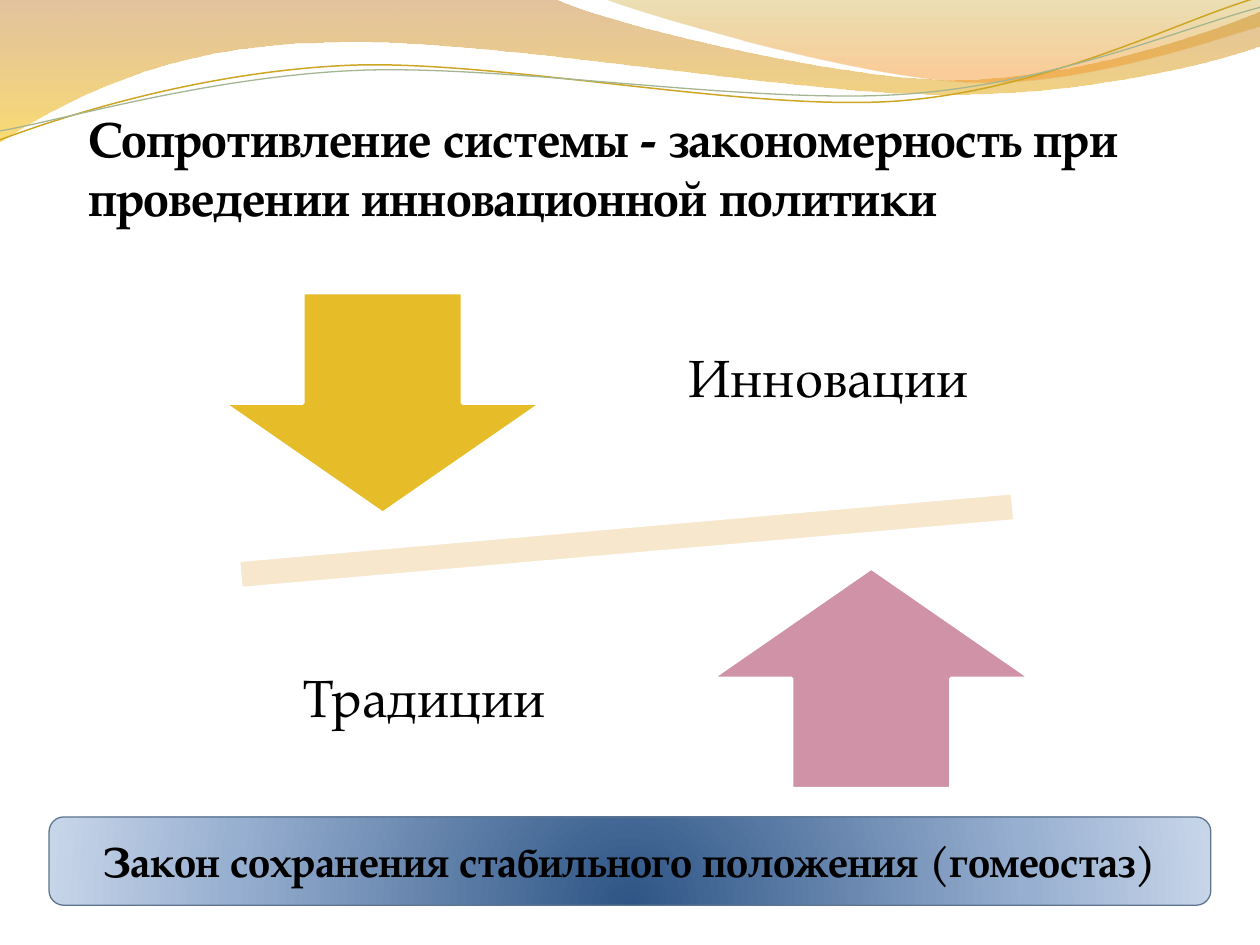
from dataclasses import dataclass

from lxml.etree import SubElement
from pptx import Presentation
from pptx.dml.color import RGBColor
from pptx.enum.shapes import MSO_SHAPE as SHAPE
from pptx.enum.text import MSO_ANCHOR as ANCHOR, MSO_AUTO_SIZE as AUTOSIZE, PP_ALIGN as ALIGN
from pptx.oxml.ns import qn
from pptx.util import Cm, Pt


@dataclass(frozen=True)
class Theme:
    font: str = "TeX Gyre Pagella"
    text: str = "000000"
    white: str = "FFFFFF"
    beam: str = "F6E7CD"
    down: str = "E7BC29"
    up: str = "D092A7"
    gold_line: str = "CCA624"
    green_line: str = "A5B592"
    law_line: str = "5E7590"
    wave: tuple = ((0, "C07A28", 45), (100, "F7BF00", 55))
    corner: tuple = ((0, "C09709", 30), (80, "F59320", 45))
    law: tuple = ((0, "2E5585", 100), (68, "97AFD0", 100), (100, "C7D5E9", 100))
    title_size: int = 28
    label_size: int = 30
    law_size: int = 24


THEME = Theme()

WAVE = [(0, -0.03), (11.18, -0.03),
        (12.09, 0.43, 16.87, 1.6, 19.25, 1.6),
        (21.67, 1.6, 24.33, 0.66, 25.4, 0.23), (25.43, 0.91),
        (24.97, 1.12, 22.1, 1.93, 18.95, 1.9),
        (15.8, 1.9, 9.7, 0.71, 6.53, 0.86),
        (3.28, 0.89, 1.17, 2.11, -0.03, 2.87), (0, -0.03)]
CORNER = [(12.17, -0.03),
          (12.93, 0.28, 17.32, 1.57, 19.53, 1.65),
          (21.74, 1.75, 24.41, 0.81, 25.4, 0.53), (25.4, 0), (12.17, -0.03)]
GOLD_CURVE = [(-0.05, 2.22),
              (1.19, 1.82, 4.02, 1.04, 7.05, 1.05),
              (10.05, 1.07, 15.02, 2.37, 18.08, 2.29),
              (21.13, 2.2, 23.86, 0.91, 25.41, 0.55)]
GREEN_CURVE = [(-0.04, 2.04),
               (1.16, 1.9, 4.17, 1.15, 7.2, 1.16),
               (10.25, 1.18, 15.13, 2.23, 18.19, 2.16),
               (21.22, 2.1, 23.95, 1.06, 25.45, 0.75)]
CURVE_ROTATION = 357.3


def rgb(color):
    return RGBColor.from_string(color)


def box(*lengths):
    return [Cm(v) for v in lengths]


def add_color(parent, color, opacity):
    clr = SubElement(parent, qn("a:srgbClr"), val=color)
    if opacity < 100:
        SubElement(clr, qn("a:alpha"), val=str(opacity * 1000))


def set_gradient(sp, stops, radial=False):
    sp.fill.background()
    no_fill = sp._element.spPr.find(qn("a:noFill"))
    grad = SubElement(sp._element.spPr, qn("a:gradFill"), rotWithShape="1")
    stop_list = SubElement(grad, qn("a:gsLst"))
    for pos, color, opacity in stops:
        add_color(SubElement(stop_list, qn("a:gs"), pos=str(pos * 1000)), color, opacity)
    if radial:
        circle = SubElement(grad, qn("a:path"), {"path": "circle"})
        SubElement(circle, qn("a:fillToRect"), l="50000", t="130000", r="50000", b="-30000")
    else:
        SubElement(grad, qn("a:lin"), ang="5400000", scaled="1")
    no_fill.getparent().replace(no_fill, grad)


def set_line(sp, color, width):
    sp.line.color.rgb = rgb(color)
    sp.line.width = Pt(width)


def bend_segments(sp, segments):
    lines = iter(list(sp._element.iter(qn("a:lnTo"))))
    for seg in segments:
        line = next(lines)
        if len(seg) == 6:
            line.tag = qn("a:cubicBezTo")
            for _ in range(2):
                extra = next(lines)
                line.append(extra[0])
                extra.getparent().remove(extra)


def add_outline(slide, outline, closed):
    points = [box(*seg[i:i + 2]) for seg in outline for i in range(0, len(seg), 2)]
    builder = slide.shapes.build_freeform(*points[0])
    builder.add_line_segments(points[1:], close=closed)
    sp = builder.convert_to_shape()
    bend_segments(sp, outline[1:])
    sp.shadow.inherit = False
    return sp


def add_area(slide, outline, stops):
    sp = add_outline(slide, outline, True)
    set_gradient(sp, stops)
    sp.line.fill.background()


def add_curve(slide, outline, color, width):
    sp = add_outline(slide, outline, False)
    sp.rotation = CURVE_ROTATION
    sp.fill.background()
    set_line(sp, color, width)


def set_text(sp, text, size, bold, align, anchor):
    tf = sp.text_frame
    tf.text = text
    tf.word_wrap = True
    tf.auto_size = AUTOSIZE.NONE
    tf.vertical_anchor = anchor
    p = tf.paragraphs[0]
    p.alignment = align
    font = p.runs[0].font
    font.name, font.size, font.bold = THEME.font, Pt(size), bold
    font.color.rgb = rgb(THEME.text)
    return tf


def add_title(slide, text):
    sp = slide.shapes.title
    sp.left, sp.top, sp.width, sp.height = box(1.78, 1.98, 23.01, 2.59)
    tf = set_text(sp, text, THEME.title_size, True, ALIGN.LEFT, ANCHOR.BOTTOM)
    tf.margin_left = tf.margin_right = tf.margin_bottom = 0
    tf.margin_top = Cm(0.13)


def add_solid(slide, kind, place, color, rotation=0):
    sp = slide.shapes.add_shape(kind, *box(*place))
    sp.shadow.inherit = False
    sp.rotation = rotation
    sp.fill.solid()
    sp.fill.fore_color.rgb = rgb(color)
    set_line(sp, THEME.white, 2)


def add_label(slide, text, left, top):
    sp = slide.shapes.add_textbox(*box(left, top, 6.86, 4.65))
    tf = set_text(sp, text, THEME.label_size, False, ALIGN.CENTER, ANCHOR.MIDDLE)
    tf.margin_left = tf.margin_right = tf.margin_top = tf.margin_bottom = Cm(0.58)
    tf.paragraphs[0].line_spacing = 0.9


def add_law(slide, text):
    sp = slide.shapes.add_shape(SHAPE.ROUNDED_RECTANGLE, *box(0.99, 16.47, 23.42, 1.78))
    sp.shadow.inherit = False
    set_gradient(sp, THEME.law, radial=True)
    set_line(sp, THEME.law_line, 0.75)
    set_text(sp, text, THEME.law_size, True, ALIGN.CENTER, ANCHOR.MIDDLE)


def main():
    prs = Presentation()
    prs.slide_width, prs.slide_height = box(25.4, 19.05)
    slide = prs.slides.add_slide(prs.slide_layouts[5])

    add_area(slide, WAVE, THEME.wave)
    add_area(slide, CORNER, THEME.corner)
    add_curve(slide, GOLD_CURVE, THEME.gold_line, 0.85)
    add_curve(slide, GREEN_CURVE, THEME.green_line, 0.75)

    add_title(slide, "Сопротивление системы - закономерность при проведении инновационной политики")
    add_solid(slide, SHAPE.MATH_MINUS, (1.98, 9.68, 21.31, 2.44), THEME.beam, 355)
    add_solid(slide, SHAPE.DOWN_ARROW, (4.5, 5.9, 6.43, 4.45), THEME.down)
    add_label(slide, "Инновации", 13.28, 5.35)
    add_solid(slide, SHAPE.UP_ARROW, (14.35, 11.45, 6.43, 4.45), THEME.up)
    add_label(slide, "Традиции", 5.13, 11.79)
    add_law(slide, "Закон сохранения стабильного положения (гомеостаз)")

    prs.save("out.pptx")


if __name__ == "__main__":
    main()
